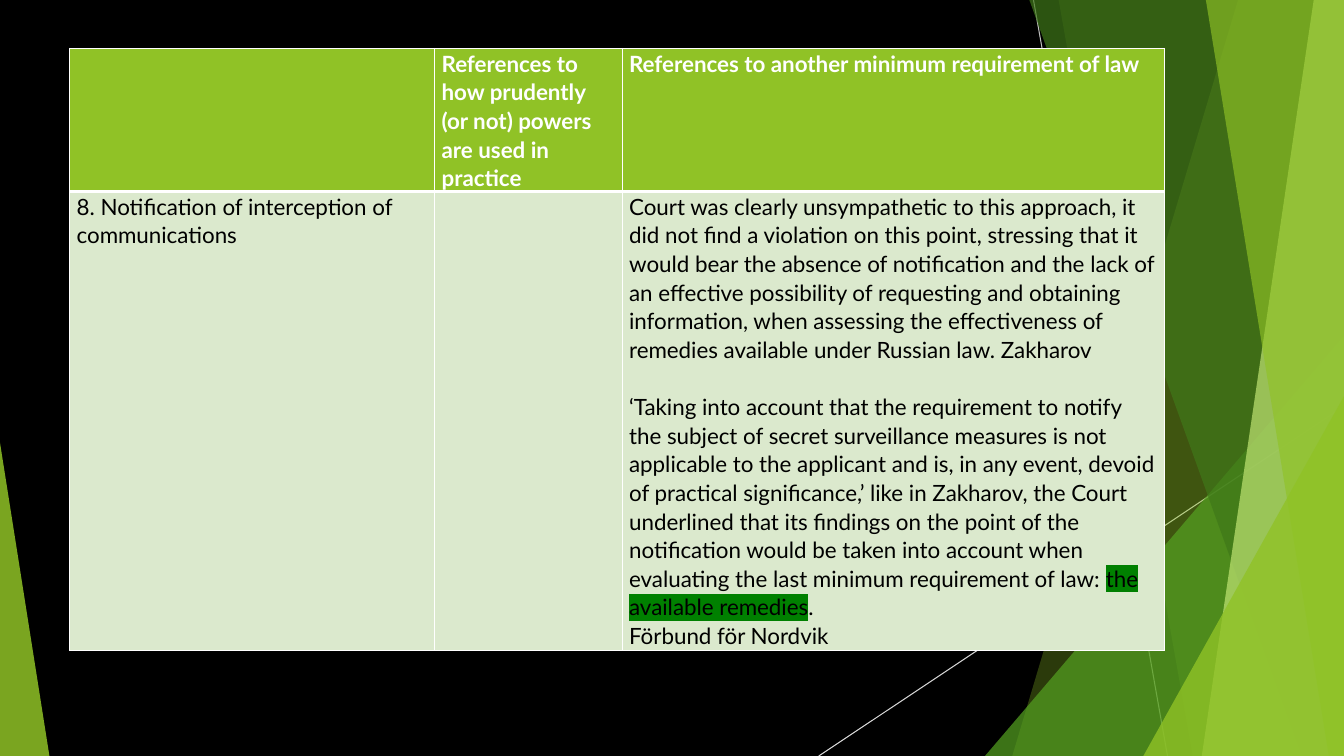
from pptx import Presentation
from pptx import util as u
from pptx.dml.color import RGBColor
from pptx.enum import shapes
from pptx.oxml import ns
from lxml import etree

WIDTH, HEIGHT = u.Inches(13.33), u.Inches(7.5)
COLOURS = {
    "night": "000000", "white": "FFFFFF", "silver": "BFBFBF", "mist": "D9D9D9",
    "lime": "90C226", "leaf": "54A021", "forest": "3F7819", "pale": "C0E474",
    "body": "DBE9CD", "marker": "008000",
}
HEADINGS = [
    "",
    "References to how prudently (or not) powers are used in practice",
    "References to another minimum requirement of law",
]
REQUIREMENT = "8. Notification of interception of communications"
RUSSIAN_CASE = (
    "Court was clearly unsympathetic to this approach, it did not find a violation on this point, "
    "stressing that it would bear the absence of notification and the lack of an effective "
    "possibility of requesting and obtaining information, when assessing the effectiveness of "
    "remedies available under Russian law. Zakharov"
)
SWEDISH_CASE = (
    "‘Taking into account that the requirement to notify the subject of secret surveillance "
    "measures is not applicable to the applicant and is, in any event, devoid of practical "
    "significance,’ like in Zakharov, the Court underlined that its findings on the point of the "
    "notification would be taken into account when evaluating the last minimum requirement of law: "
)
REMEDIES = "the available remedies"
SOURCE = "Förbund för Nordvik"


def across(percent):
    """Return a share of the slide width."""
    return round(WIDTH * percent / 100)


def down(percent):
    """Return a share of the slide height."""
    return round(HEIGHT * percent / 100)


def rgb(colour):
    """Return a named colour."""
    return RGBColor.from_string(COLOURS[colour])


def add_child(parent, tag, **attributes):
    """Append a drawing element and return it."""
    return etree.SubElement(parent, ns.qn(tag), attributes)


def add_ray(slide, colour, start, end):
    """Draw a thin line between two points given in percent."""
    ray = slide.shapes.add_connector(
        shapes.MSO_CONNECTOR.STRAIGHT,
        across(start[0]), down(start[1]), across(end[0]), down(end[1]))
    ray.line.color.rgb = rgb(colour)
    ray.line.width = u.Pt(0.75)
    add_child(ray._element.spPr, "a:effectLst")


def tint(facet, colour, opacity):
    """Give a facet a translucent fill without outline or shadow."""
    facet.shadow.inherit = False
    facet.line.fill.background()
    facet.fill.solid()
    facet.fill.fore_color.rgb = rgb(colour)
    swatch = facet._element.spPr.find(ns.qn("a:solidFill"))[0]
    add_child(swatch, "a:alpha", val=str(opacity * 1000))


def add_band(slide, colour, opacity, top_x, bottom_x):
    """Draw a full-height band from a slanted left side to the right edge."""
    outline = slide.shapes.build_freeform(across(top_x), 0)
    outline.add_line_segments(
        [(WIDTH, 0), (WIDTH, HEIGHT), (across(bottom_x), HEIGHT)], close=True)
    tint(outline.convert_to_shape(), colour, opacity)


def add_peak(slide, colour, opacity, left, top, width, apex):
    """Draw a triangle that stands on the bottom edge."""
    peak = slide.shapes.add_shape(
        shapes.MSO_SHAPE.ISOSCELES_TRIANGLE,
        across(left), down(top), across(width), HEIGHT - down(top))
    peak.adjustments[0] = apex
    tint(peak, colour, opacity)


def add_backdrop(slide):
    """Draw the black background with its green facets."""
    slide.background.fill.solid()
    slide.background.fill.fore_color.rgb = rgb("night")
    add_ray(slide, "silver", (76.9, 0), (86.87, 100))
    add_ray(slide, "mist", (100, 53.73), (60.92, 100))
    add_band(slide, "lime", 30, 92.12, 75.32)
    add_band(slide, "lime", 20, 78.77, 88.75)
    add_peak(slide, "leaf", 72, 73.29, 44.4, 26.71, 1)
    add_band(slide, "forest", 70, 76.59, 96.85)
    add_band(slide, "pale", 70, 97.75, 89.42)
    add_band(slide, "lime", 65, 89.72, 98.87)
    add_peak(slide, "lime", 80, 85.07, 52.4, 14.93, 1)
    add_peak(slide, "lime", 85, 0, 58.53, 3.68, 0)


def frame_cell(cell, top, bottom):
    """Give a cell white borders, with top and bottom widths in points."""
    properties = cell._tc.get_or_add_tcPr()
    widths = {"a:lnL": 1, "a:lnR": 1, "a:lnT": top, "a:lnB": bottom}
    for place, (side, width) in enumerate(widths.items()):
        border = add_child(properties, side, w=str(u.Pt(width)))
        add_child(add_child(border, "a:solidFill"), "a:srgbClr", val=COLOURS["white"])
        properties.insert(place, border)


def write_cell(cell, paragraphs, colour, bold):
    """Fill a cell with paragraphs, each a list of text pieces."""
    cell.margin_left = cell.margin_right = u.Inches(0.07)
    cell.margin_top = cell.margin_bottom = 0
    frame = cell.text_frame
    for place, pieces in enumerate(paragraphs):
        paragraph = frame.add_paragraph() if place else frame.paragraphs[0]
        paragraph.line_spacing = 1.07
        paragraph.font.name = "Lato"
        paragraph.font.size = u.Pt(16)
        paragraph.font.bold = bold
        paragraph.font.color.rgb = rgb(colour)
        for piece in pieces:
            run = paragraph.add_run()
            run.text = piece
            if piece == REMEDIES:
                highlight = add_child(run._r.get_or_add_rPr(), "a:highlight")
                add_child(highlight, "a:srgbClr", val=COLOURS["marker"])


def add_requirements(slide):
    """Add the table of references to requirements of law."""
    columns, rows = [27.16, 13.95, 40.36], [18.93, 60.67]
    table = slide.shapes.add_table(
        len(rows), len(columns), across(5.18), down(6.4),
        across(sum(columns)), down(sum(rows))).table
    for column, share in zip(table.columns, columns):
        column.width = across(share)
    for row, share in zip(table.rows, rows):
        row.height = down(share)
    findings = [[RUSSIAN_CASE], [SWEDISH_CASE, REMEDIES, "."], [SOURCE]]
    contents = [[[[heading]] if heading else [] for heading in HEADINGS],
                [[[REQUIREMENT]], [], findings]]
    looks = [("lime", "white", True, 1, 3), ("body", "night", False, 3, 1)]
    for row, entries, (fill, ink, bold, top, bottom) in zip(table.rows, contents, looks):
        for cell, paragraphs in zip(row.cells, entries):
            cell.fill.solid()
            cell.fill.fore_color.rgb = rgb(fill)
            frame_cell(cell, top, bottom)
            write_cell(cell, paragraphs, ink, bold)
    table.cell(1, 2).text_frame.paragraphs[1].space_before = u.Pt(20.4)


def main():
    """Build and save the slide."""
    deck = Presentation()
    deck.slide_width, deck.slide_height = WIDTH, HEIGHT
    slide = deck.slides.add_slide(deck.slide_layouts[6])
    add_backdrop(slide)
    add_requirements(slide)
    deck.save("out.pptx")


if __name__ == "__main__":
    main()
